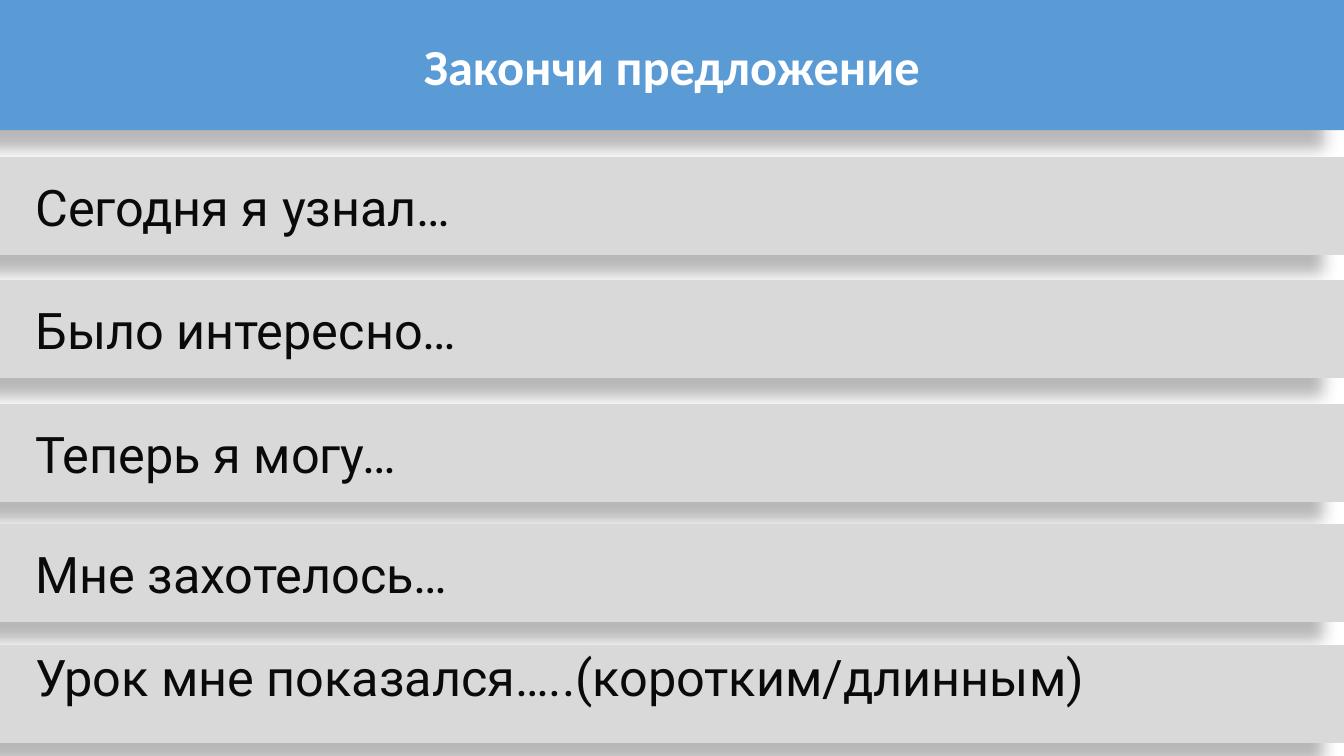
from lxml import etree
from pptx import Presentation
from pptx import util as u
from pptx.dml.color import RGBColor
from pptx.enum import shapes, text
from pptx.oxml import ns

BLUE = RGBColor(0x5B, 0x9B, 0xD5)
GREY = RGBColor(0xD9, 0xD9, 0xD9)
WHITE = RGBColor(0xFF, 0xFF, 0xFF)
INK = RGBColor(0x0A, 0x0A, 0x0A)
WIDE, HIGH = 13.33, 7.5
ROWS = [
    (1.56, "Сегодня я узнал…"),
    (2.78, "Было интересно…"),
    (4.01, "Теперь я могу…"),
    (5.2, "Мне захотелось…"),
    (6.4, "Урок мне показался…..(коротким/длинным)"),
]


def shade(bar):
    """Cast a soft shadow down and to the left of the bar."""
    bar.shadow.inherit = False
    effects = bar._element.spPr.find(ns.qn("a:effectLst"))
    cast = etree.SubElement(
        effects, ns.qn("a:outerShdw"), blurRad=str(u.Pt(11.8)),
        dist=str(u.Pt(19.7)), dir=str(141 * 60000), algn="ctr", rotWithShape="0")
    tint = etree.SubElement(cast, ns.qn("a:srgbClr"), val="000000")
    etree.SubElement(tint, ns.qn("a:alpha"), val="28000")


def band(slide, top, high, fill, words, face, ink, align, bold=False, inset=0.1):
    """Draw a full-width bar with one line of text and return its paragraph."""
    bar = slide.shapes.add_shape(
        shapes.MSO_SHAPE.RECTANGLE, 0, u.Inches(top), u.Inches(WIDE), u.Inches(high))
    bar.fill.solid()
    bar.fill.fore_color.rgb = fill
    bar.line.fill.background()
    shade(bar)
    frame = bar.text_frame
    frame.word_wrap = True
    frame.vertical_anchor = text.MSO_ANCHOR.MIDDLE
    frame.margin_left = u.Inches(inset)
    para = frame.paragraphs[0]
    para.alignment = align
    run = para.add_run()
    run.text = words
    run.font.name = face
    run.font.size = u.Pt(36)
    run.font.bold = bold
    run.font.color.rgb = ink
    return para


def head(slide):
    """Draw the title bar."""
    band(slide, 0, 1.29, BLUE, "Закончи предложение", "Calibri", WHITE,
         text.PP_ALIGN.CENTER, bold=True)


def list_rows(slide):
    """Draw the sentence bars, the last one with tight line spacing."""
    for top, words in ROWS:
        para = band(slide, top, 0.97, GREY, words, "Roboto", INK,
                    text.PP_ALIGN.LEFT, inset=0.35)
    para.line_spacing = u.Pt(18)
    para.space_before = u.Pt(7.5)
    para.space_after = u.Pt(12)


def main():
    """Build and save the slide."""
    deck = Presentation()
    deck.slide_width = u.Inches(WIDE)
    deck.slide_height = u.Inches(HIGH)
    slide = deck.slides.add_slide(deck.slide_layouts[6])
    head(slide)
    list_rows(slide)
    deck.save("out.pptx")


if __name__ == "__main__":
    main()
